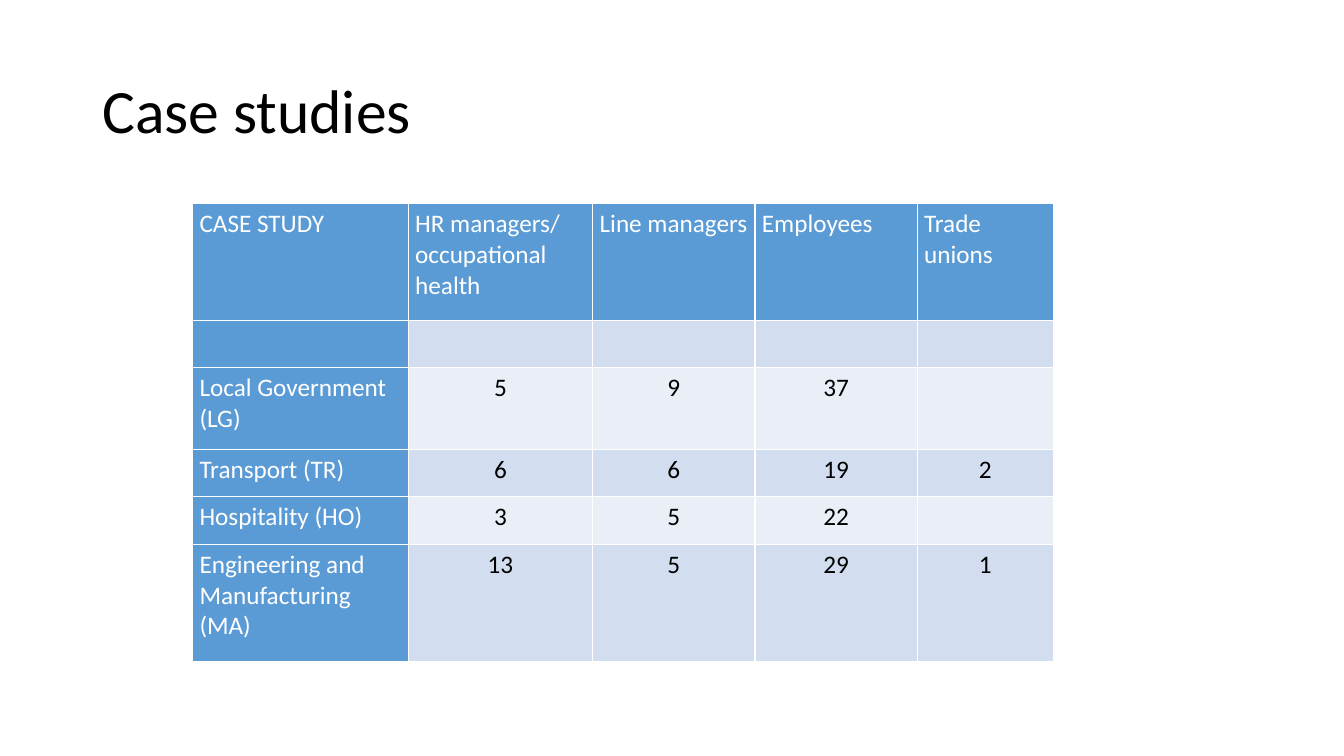
from dataclasses import dataclass

import pptx
import pptx.dml.color
import pptx.enum.text
import pptx.util

# The slide is a grid of 160 columns by 90 rows, twelve to the inch.
GRID_COLS, GRID_ROWS = 160, 90
FONT = "Calibri"
BLUE, WHITE, BLACK = "5B9BD5", "FFFFFF", "000000"
BANDS = ("EAEFF7", "D2DEEF")
LEFT = pptx.enum.text.PP_ALIGN.LEFT
CENTER = pptx.enum.text.PP_ALIGN.CENTER


@dataclass(frozen=True)
class Row:
    height: float
    cells: tuple[str, ...]


COLUMN_WIDTHS = (25.68, 21.96, 19.32, 19.32, 16.2)
ROWS = (
    Row(13.92, ("CASE STUDY", "HR managers/\noccupational health",
                "Line managers", "Employees", "Trade unions")),
    Row(5.64, ("", "", "", "", "")),
    Row(9.72, ("Local Government (LG)", "5", "9", "37", "")),
    Row(5.64, ("Transport (TR)", "6", "6", "19", "2")),
    Row(5.64, ("Hospitality (HO)", "3", "5", "22", "")),
    Row(13.92, ("Engineering and Manufacturing (MA)", "13", "5", "29", "1")),
)


def grid(units: float) -> int:
    """Turn grid units into a length."""
    return pptx.util.Inches(units / 12)


def rgb(color: str) -> pptx.dml.color.RGBColor:
    return pptx.dml.color.RGBColor.from_string(color)


def write(tf, text: str, *, size: float, color: str, align=LEFT,
          spacing: float = 1.0) -> None:
    """Fill a text frame, one paragraph for each line of text."""
    tf.word_wrap = True
    tf.text = text
    for p in tf.paragraphs:
        p.alignment = align
        p.line_spacing = spacing
        p.font.size = pptx.util.Pt(size)
        for r in p.runs:
            r.font.name = FONT
            r.font.size = pptx.util.Pt(size)
            r.font.bold = False
            r.font.color.rgb = rgb(color)


def add_title(s, text: str) -> None:
    sp = s.shapes.add_textbox(grid(11), grid(4.8), grid(138), grid(17.4))
    sp.text_frame.vertical_anchor = pptx.enum.text.MSO_ANCHOR.MIDDLE
    write(sp.text_frame, text, size=44, color=BLACK, spacing=0.9)


def add_case_table(s, rows: tuple[Row, ...], widths: tuple[float, ...]) -> None:
    """Add the table with a blue header row and column and banded rows."""
    table = s.shapes.add_table(
        len(rows), len(widths), grid(22.92), grid(24.24),
        grid(sum(widths)), grid(sum(row.height for row in rows))).table
    table.first_col = True
    for column, width in zip(table.columns, widths):
        column.width = grid(width)
    for i, row in enumerate(rows):
        table.rows[i].height = grid(row.height)
        for j, text in enumerate(row.cells):
            heading = i == 0 or j == 0
            cell = table.cell(i, j)
            cell.margin_left = cell.margin_right = pptx.util.Inches(0.07)
            cell.fill.solid()
            cell.fill.fore_color.rgb = rgb(BLUE if heading else BANDS[i % 2])
            write(cell.text_frame, text, size=18,
                  color=WHITE if heading else BLACK,
                  align=LEFT if heading else CENTER)


def main() -> None:
    prs = pptx.Presentation()
    prs.slide_width, prs.slide_height = grid(GRID_COLS), grid(GRID_ROWS)
    s = prs.slides.add_slide(prs.slide_layouts[6])
    add_title(s, "Case studies")
    add_case_table(s, ROWS, COLUMN_WIDTHS)
    prs.save("out.pptx")


if __name__ == "__main__":
    main()
